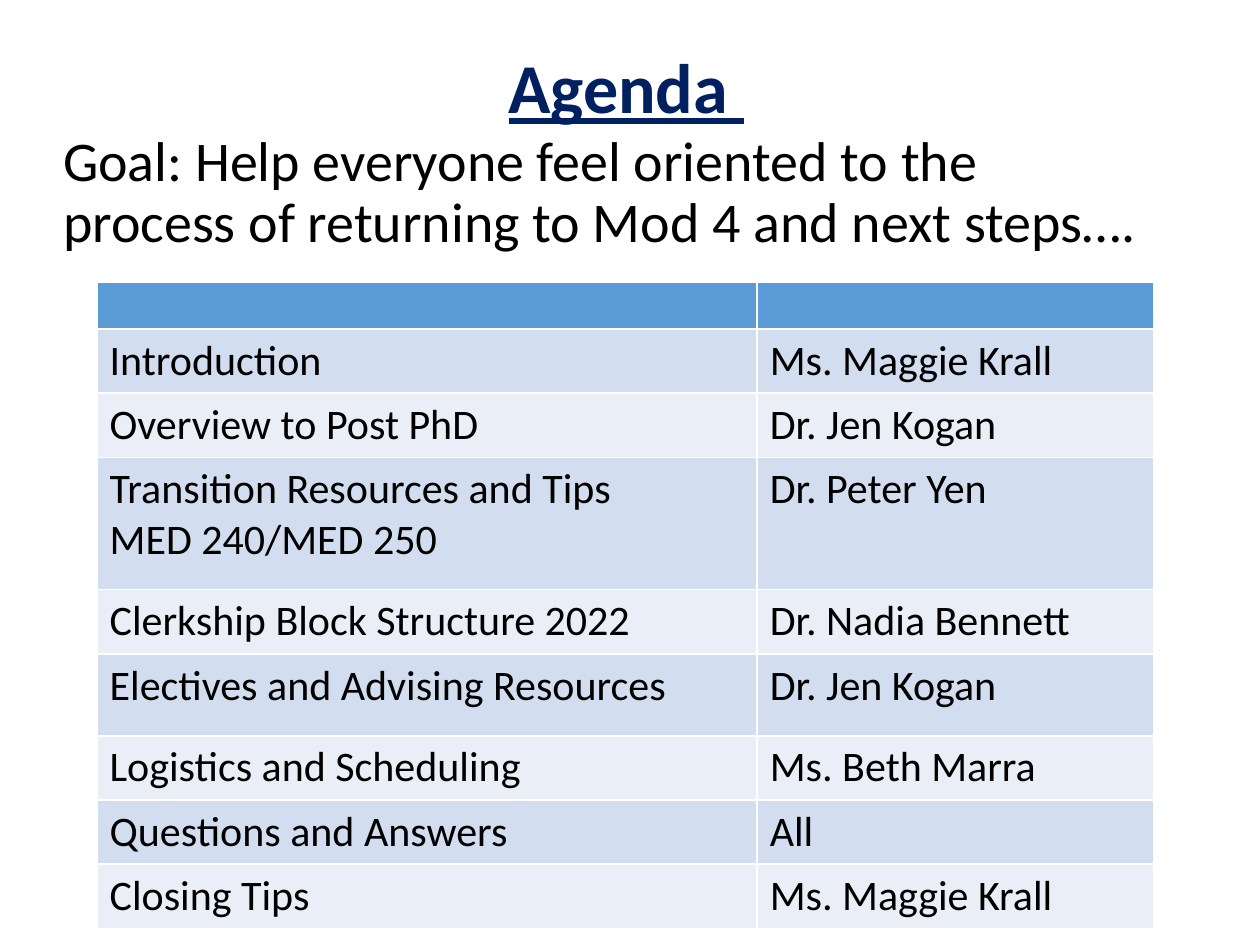
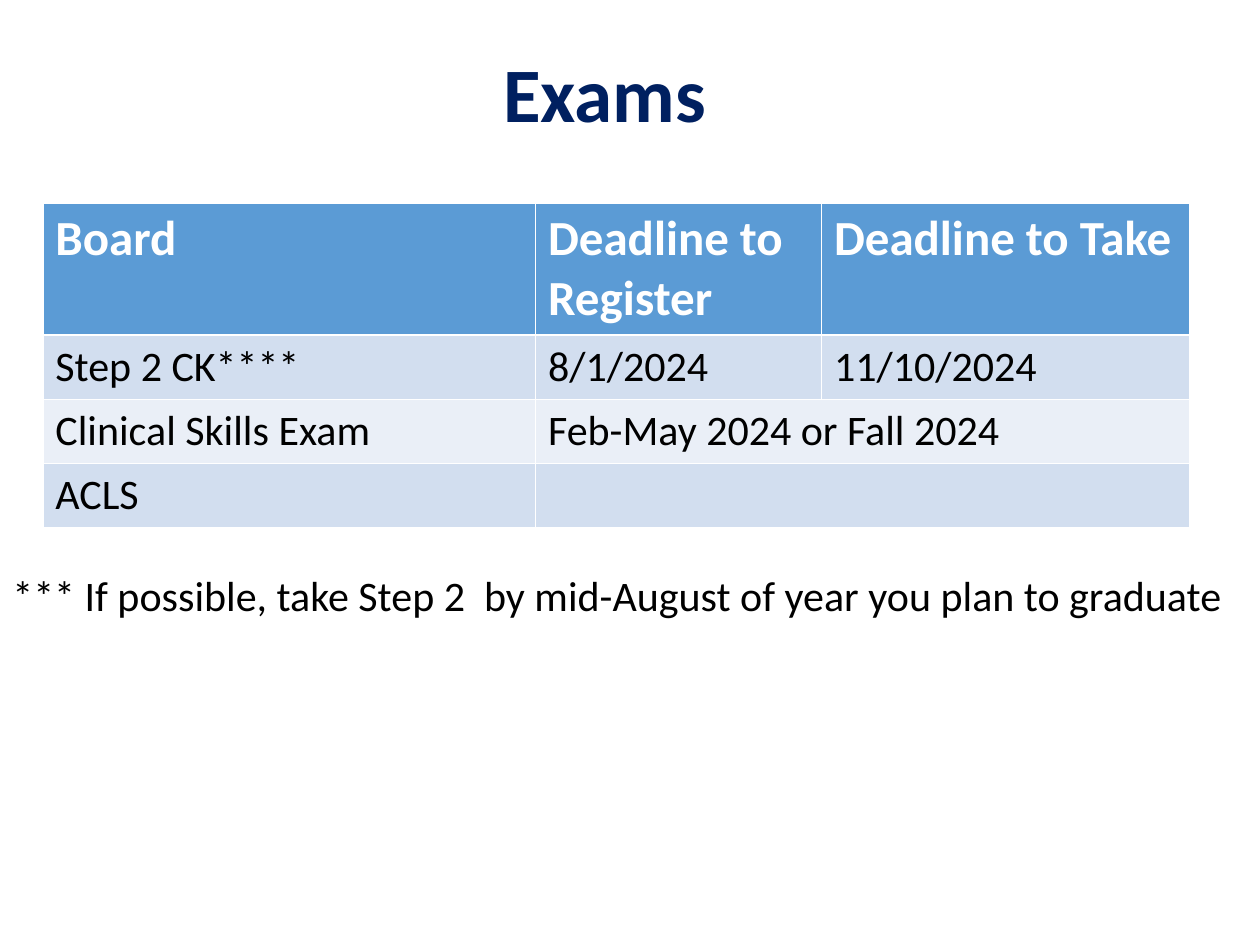
from pptx import Presentation
from pptx.dml.color import RGBColor
from pptx.enum.text import MSO_ANCHOR, MSO_AUTO_SIZE, PP_ALIGN
from pptx.util import Inches, Pt
from lxml import etree

CENTER, LEFT = PP_ALIGN.CENTER, PP_ALIGN.LEFT
MIDDLE, TOP = MSO_ANCHOR.MIDDLE, MSO_ANCHOR.TOP
NO_FIT, FIT_SHAPE = MSO_AUTO_SIZE.NONE, MSO_AUTO_SIZE.SHAPE_TO_FIT_TEXT

# Shared style
FONT = "Calibri"
NAVY, BLACK, WHITE = "002060", "000000", "FFFFFF"
HEADER_FILL, BAND_FILLS = "5B9BD5", ("D2DEEF", "EAEFF7")
TITLE_SIZE = (8.62, 1.45)
LINE_SPACING = 0.9
ROW = 0.51
DRAWINGML = "{http://schemas.openxmlformats.org/drawingml/2006/main}"

# Content: each table row is (height, cells); None continues the cell to its left
AGENDA_GOAL = ("Goal: Help everyone feel oriented to the process of "
               "returning to Mod 4 and next steps….")
AGENDA_COLUMNS = (5.24, 3.15)
AGENDA_ROWS = [
    (0.37, ("", "")),
    (ROW, ("Introduction", "Ms. Maggie Krall")),
    (ROW, ("Overview to Post PhD", "Dr. Jen Kogan")),
    (1.05, ("Transition Resources and Tips\nMED 240/MED 250", "Dr. Peter Yen")),
    (ROW, ("Clerkship Block Structure 2022", "Dr. Nadia Bennett")),
    (0.65, ("Electives and Advising Resources", "Dr. Jen Kogan")),
    (ROW, ("Logistics and Scheduling", "Ms. Beth Marra")),
    (ROW, ("Questions and Answers", "All")),
    (ROW, ("Closing Tips", "Ms. Maggie Krall")),
]
EXAM_COLUMNS = (3.91, 2.27, 2.92)
EXAM_ROWS = [
    (1.04, ("Board", "Deadline to Register", "Deadline to Take")),
    (ROW, ("Step 2 CK****", "8/1/2024", "11/10/2024")),
    (ROW, ("Clinical Skills Exam", "Feb-May 2024 or Fall 2024", None)),
    (ROW, ("ACLS", "", None)),
]
EXAM_NOTE = "*** If possible, take Step 2  by mid-August of year you plan to graduate"


def color(hex_string):
    return RGBColor.from_string(hex_string)


def style(paragraph, size, hex_string=BLACK, bold=False, underline=False):
    font = paragraph.font
    font.name, font.size = FONT, Pt(size)
    font.bold, font.underline = bold, underline
    font.color.rgb = color(hex_string)


def place(shape, left, top, width, height):
    shape.left, shape.top = Inches(left), Inches(top)
    shape.width, shape.height = Inches(width), Inches(height)


def set_title(slide, text, left, top, size, underline=False):
    title = slide.shapes.title
    place(title, left, top, *TITLE_SIZE)
    frame = title.text_frame
    frame.text = text
    frame.vertical_anchor, frame.auto_size = MIDDLE, NO_FIT
    paragraph = frame.paragraphs[0]
    paragraph.alignment, paragraph.line_spacing = CENTER, LINE_SPACING
    style(paragraph, size, NAVY, bold=True, underline=underline)


def set_body(slide, text, box, size):
    body = slide.placeholders[1]
    place(body, *box)
    frame = body.text_frame
    frame.text = text
    frame.vertical_anchor, frame.auto_size = TOP, NO_FIT
    paragraph = frame.paragraphs[0]
    paragraph.alignment, paragraph.line_spacing = LEFT, LINE_SPACING
    paragraph.space_before = Pt(0)
    # Plain text: no bullet, no hanging indent
    properties = paragraph._p.get_or_add_pPr()
    properties.set("marL", "0")
    properties.set("indent", "0")
    etree.SubElement(properties, DRAWINGML + "buNone")
    style(paragraph, size)


def add_banded_table(slide, left, top, columns, rows):
    height = sum(row_height for row_height, _ in rows)
    table = slide.shapes.add_table(
        len(rows), len(columns), Inches(left), Inches(top),
        Inches(sum(columns)), Inches(height)).table
    for column, width in zip(table.columns, columns):
        column.width = Inches(width)
    for row_index, (row_height, texts) in enumerate(rows):
        table.rows[row_index].height = Inches(row_height)
        header = row_index == 0
        fill = HEADER_FILL if header else BAND_FILLS[(row_index - 1) % 2]
        for column_index, text in enumerate(texts):
            cell = table.cell(row_index, column_index)
            cell.fill.solid()
            cell.fill.fore_color.rgb = color(fill)
            if text is None:
                table.cell(row_index, column_index - 1).merge(cell)
                continue
            if header and not text:
                cell.margin_top = cell.margin_bottom = 0
            cell.text = text
            for paragraph in cell.text_frame.paragraphs:
                if header:
                    style(paragraph, 28, WHITE, bold=True)
                elif text:
                    style(paragraph, 24)
            if header and not text:
                style(cell.text_frame.paragraphs[0], 16, WHITE)


def add_note(slide, text, box, size):
    note = slide.shapes.add_textbox(*map(Inches, box))
    frame = note.text_frame
    frame.word_wrap, frame.auto_size = True, FIT_SHAPE
    frame.text = text
    style(frame.paragraphs[0], size)


def main():
    presentation = Presentation()
    presentation.slide_width, presentation.slide_height = Inches(10), Inches(7.5)
    title_and_content, title_only = (presentation.slide_layouts[i] for i in (1, 5))

    # Agenda
    slide = presentation.slides.add_slide(title_and_content)
    set_title(slide, "Agenda ", 0.66, 0, 40, underline=True)
    set_body(slide, AGENDA_GOAL, (0.4, 1.01, 8.88, 1.09), 32)
    add_banded_table(slide, 0.77, 2.24, AGENDA_COLUMNS, AGENDA_ROWS)

    # Exams
    slide = presentation.slides.add_slide(title_only)
    set_title(slide, "Exams", 0.49, 0.05, 44)
    add_banded_table(slide, 0.34, 1.61, EXAM_COLUMNS, EXAM_ROWS)
    add_note(slide, EXAM_NOTE, (0, 4.47, 9.99, 0.5), 24)

    presentation.save("out.pptx")


if __name__ == "__main__":
    main()
